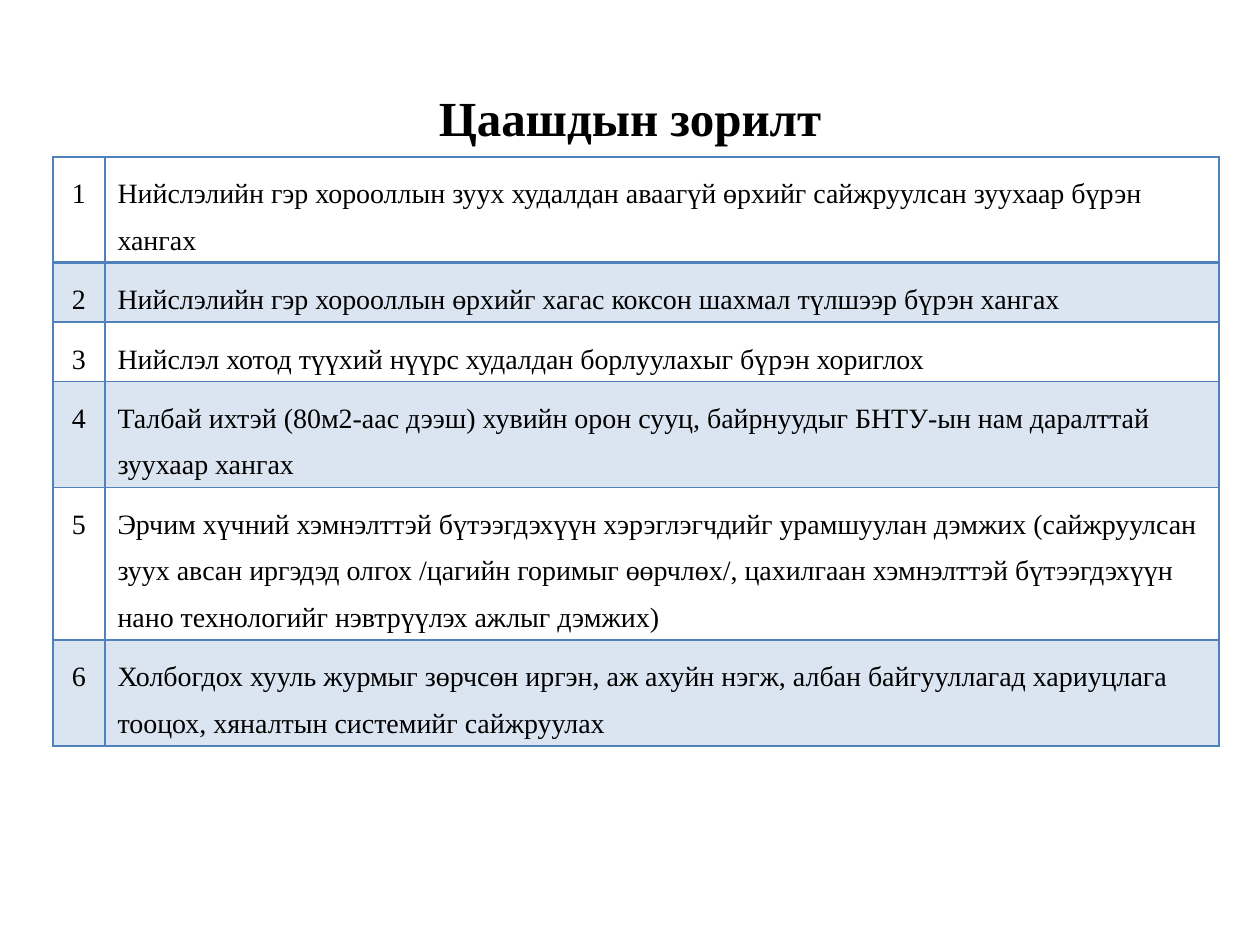
from lxml import etree
from pptx import Presentation
from pptx.dml.color import RGBColor
from pptx.enum import text
from pptx.oxml import ns
from pptx.util import Emu, Pt

SCALE = 914400 / 126
FONT = "Times New Roman"
HUES = {"ink": "000000", "blue": "4F81BD"}
COLS = [52, 1114]
LINE, PAD = 46.5, 12.6
GOALS = [
    (2, "Нийслэлийн гэр хорооллын зуух худалдан аваагүй өрхийг сайжруулсан зуухаар бүрэн хангах"),
    (1, "Нийслэлийн гэр хорооллын өрхийг хагас коксон шахмал түлшээр бүрэн хангах"),
    (1, "Нийслэл хотод түүхий нүүрс худалдан борлуулахыг бүрэн хориглох"),
    (2, "Талбай ихтэй (80м2-аас дээш) хувийн орон сууц, байрнуудыг БНТУ-ын нам даралттай "
        "зуухаар хангах"),
    (3, "Эрчим хүчний хэмнэлттэй бүтээгдэхүүн хэрэглэгчдийг урамшуулан дэмжих (сайжруулсан "
        "зуух авсан иргэдэд олгох /цагийн горимыг өөрчлөх/, цахилгаан хэмнэлттэй бүтээгдэхүүн "
        "нано технологийг нэвтрүүлэх ажлыг дэмжих)"),
    (2, "Холбогдох хууль журмыг зөрчсөн иргэн, аж ахуйн нэгж, албан байгууллагад хариуцлага "
        "тооцох, хяналтын системийг сайжруулах"),
]


def px(n):
    """Turn pixels into EMU."""
    return Emu(round(n * SCALE))


def write(frame, words, size, align, bold=False):
    """Add one formatted run to the first paragraph of a frame."""
    para = frame.paragraphs[0]
    para.alignment = align
    run = para.add_run()
    run.text = words
    font = run.font
    font.name, font.size, font.bold = FONT, Pt(size), bold
    font.color.rgb = RGBColor.from_string(HUES["ink"])
    return para


def add_title(slide, words):
    """Place and fill the title."""
    title = slide.shapes.title
    title.left, title.top, title.width, title.height = map(px, (63, 38, 1134, 157))
    title.text_frame.vertical_anchor = text.MSO_ANCHOR.MIDDLE
    write(title.text_frame, words, 28, text.PP_ALIGN.CENTER, True)


def edge(cell, side, width):
    """Draw one border of a cell."""
    props = cell._tc.get_or_add_tcPr()
    line = etree.SubElement(props, ns.qn("a:ln" + side), w=str(Pt(width)))
    fill = etree.SubElement(line, ns.qn("a:solidFill"))
    etree.SubElement(fill, ns.qn("a:srgbClr"), val=HUES["blue"])


def tint(cell, shaded):
    """Fill a cell with pale blue or leave it clear."""
    if not shaded:
        cell.fill.background()
        return
    cell.fill.solid()
    cell.fill.fore_color.rgb = RGBColor.from_string(HUES["blue"])
    hue = cell._tc.tcPr.find(".//" + ns.qn("a:solidFill") + "/" + ns.qn("a:srgbClr"))
    for hue in cell._tc.tcPr.findall(ns.qn("a:solidFill") + "/" + ns.qn("a:srgbClr")):
        etree.SubElement(hue, ns.qn("a:alpha"), val="20000")


def add_goals(slide):
    """Build the numbered table of goals."""
    highs = [round(n * LINE + PAD) for n, _ in GOALS]
    box = map(px, (53, 157, sum(COLS), sum(highs)))
    table = slide.shapes.add_table(len(GOALS), len(COLS), *box).table
    table.first_row = table.horz_banding = False
    for col, wide in zip(table.columns, COLS):
        col.width = px(wide)
    aligns = text.PP_ALIGN.CENTER, text.PP_ALIGN.LEFT
    for i, (_, goal) in enumerate(GOALS):
        table.rows[i].height = px(highs[i])
        for j, words in enumerate((str(i + 1), goal)):
            cell = table.cell(i, j)
            write(cell.text_frame, words, 16, aligns[j]).line_spacing = 1.5
            for side in "LRTB":
                thick = (i, side) in ((0, "B"), (1, "T"))
                edge(cell, side, 2 if thick else 1)
            tint(cell, i % 2 == 1)


def main():
    """Build and save the slide."""
    deck = Presentation()
    deck.slide_width, deck.slide_height = px(1260), px(945)
    slide = deck.slides.add_slide(deck.slide_layouts[5])
    add_title(slide, "Цаашдын зорилт")
    add_goals(slide)
    deck.save("out.pptx")


if __name__ == "__main__":
    main()
